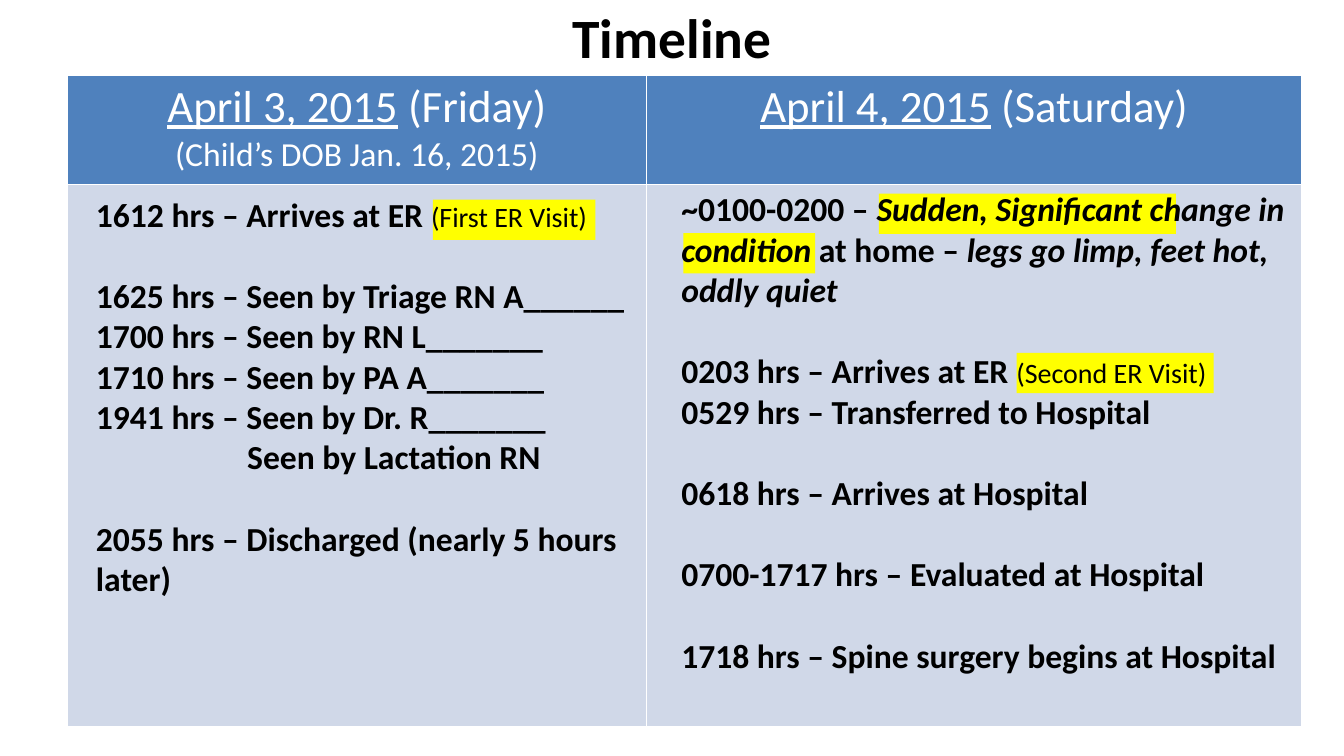
"""Build the two-day timeline slide."""
from lxml.etree import SubElement
from pptx import Presentation
from pptx.dml.color import RGBColor
from pptx.enum.shapes import MSO_SHAPE as Shape
from pptx.enum.text import MSO_ANCHOR as Anchor, PP_ALIGN as Align
from pptx.oxml.ns import qn
from pptx.util import Inches, Pt

BLACK = RGBColor(0x00, 0x00, 0x00)
WHITE = RGBColor(0xFF, 0xFF, 0xFF)
YELLOW = RGBColor(0xFF, 0xFF, 0x00)
HEADER_BLUE = RGBColor(0x4F, 0x81, 0xBD)
BODY_BLUE = RGBColor(0xD0, 0xD8, 0xE8)

BOLD = (36, True, False, False)
ITALIC = (36, True, True, False)
VISIT = (30, False, False, False)
DATE = (48, False, False, True)
DAY = (48, False, False, False)
BIRTH = (36, False, False, False)
TITLE = (59.4, True, False, False)

GAP = Pt(44)
TAB_STOP = Inches(2.25)

HEADERS = [
    [(False, [("April 3, 2015", DATE), (" (Friday)", DAY)]),
     (False, [("(Child’s DOB Jan. 16, 2015)", BIRTH)])],
    [(False, [("April 4, 2015", DATE), (" (Saturday)", DAY)])],
]
FRIDAY = [
    (False, [("1612 hrs – Arrives at ER ", BOLD), ("(First ER Visit)", VISIT)]),
    (True, [("1625 hrs – Seen by Triage RN A______", BOLD)]),
    (False, [("1700 hrs – Seen by RN L_______", BOLD)]),
    (False, [("1710 hrs – Seen by PA A_______", BOLD)]),
    (False, [("1941 hrs – Seen by Dr. R_______", BOLD)]),
    (False, [("\tSeen by Lactation RN", BOLD)]),
    (True, [("2055 hrs – Discharged (nearly 5 hours later)", BOLD)]),
]
SATURDAY = [
    (False, [("~0100-0200 – ", BOLD),
             ("Sudden, Significant change in condition ", ITALIC),
             ("at home – ", BOLD),
             ("legs go limp, feet hot, oddly quiet", ITALIC)]),
    (True, [("0203 hrs – Arrives at ER ", BOLD), ("(Second ER Visit)", VISIT)]),
    (False, [("0529 hrs – Transferred to Hospital", BOLD)]),
    (True, [("0618 hrs – Arrives at Hospital", BOLD)]),
    (True, [("0700-1717 hrs – Evaluated at Hospital", BOLD)]),
    (True, [("1718 hrs – Spine surgery begins at Hospital", BOLD)]),
]
HIGHLIGHTS = [(6.44, 2.97, 2.42), (15.13, 5.25, 2.93),
              (13.08, 2.88, 4.42), (10.17, 3.47, 1.96)]
HIGHLIGHT_HEIGHT = 0.6
TEXT_BOXES = [
    ((1, 0.12, 18, 0.85), [(False, [("Timeline", TITLE)])], Align.CENTER, Anchor.MIDDLE),
    ((1.33, 2.83, 8.38, 6.77), FRIDAY, Align.LEFT, Anchor.TOP),
    ((10.04, 2.75, 9.25, 7.37), SATURDAY, Align.LEFT, Anchor.TOP),
]
COLUMN_WIDTHS = [8.62, 9.75]
ROW_HEIGHTS = [1.63, 8.06]


def add_tab_stop(paragraph):
    properties = paragraph._p.get_or_add_pPr()
    tab_list = SubElement(properties, qn("a:tabLst"))
    SubElement(tab_list, qn("a:tab"), pos=str(TAB_STOP), algn="l")


def write(frame, lines, color, alignment):
    for index, (gap_before, runs) in enumerate(lines):
        paragraph = frame.add_paragraph() if index else frame.paragraphs[0]
        paragraph.alignment = alignment
        if gap_before:
            paragraph.space_before = GAP
        if runs[0][0].startswith("\t"):
            add_tab_stop(paragraph)
        paragraph.font.name = "Calibri"
        paragraph.font.color.rgb = color
        for text, (size, bold, italic, underline) in runs:
            run = paragraph.add_run()
            run.text = text
            run.font.size = Pt(size)
            run.font.bold = bold
            run.font.italic = italic
            run.font.underline = underline


def add_borders(cell):
    properties = cell._tc.get_or_add_tcPr()
    for position, side in enumerate(("lnL", "lnR", "lnT", "lnB")):
        line = properties.makeelement(qn(f"a:{side}"), {"w": str(Pt(1))})
        fill = SubElement(line, qn("a:solidFill"))
        SubElement(fill, qn("a:srgbClr"), val=str(WHITE))
        properties.insert(position, line)


def add_timeline_table(slide):
    table = slide.shapes.add_table(
        2, 2, Inches(1), Inches(1.12),
        Inches(sum(COLUMN_WIDTHS)), Inches(sum(ROW_HEIGHTS))).table
    table.horz_banding = False
    for column, width in zip(table.columns, COLUMN_WIDTHS):
        column.width = Inches(width)
    for row, height, color in zip(table.rows, ROW_HEIGHTS, (HEADER_BLUE, BODY_BLUE)):
        row.height = Inches(height)
        for cell in row.cells:
            cell.fill.solid()
            cell.fill.fore_color.rgb = color
            cell.margin_left = cell.margin_right = Inches(0.15)
            cell.margin_top = cell.margin_bottom = Inches(0.07)
            add_borders(cell)
    for cell, lines in zip(table.rows[0].cells, HEADERS):
        write(cell.text_frame, lines, WHITE, Align.CENTER)


def add_highlight(slide, left, top, width):
    shape = slide.shapes.add_shape(
        Shape.RECTANGLE, Inches(left), Inches(top),
        Inches(width), Inches(HIGHLIGHT_HEIGHT))
    shape.shadow.inherit = False
    shape.fill.solid()
    shape.fill.fore_color.rgb = YELLOW
    shape.line.fill.background()


def add_text(slide, box, lines, alignment, anchor):
    frame = slide.shapes.add_textbox(*map(Inches, box)).text_frame
    frame.word_wrap = True
    frame.vertical_anchor = anchor
    write(frame, lines, BLACK, alignment)


def main():
    presentation = Presentation()
    presentation.slide_width = Inches(20)
    presentation.slide_height = Inches(11.25)
    slide = presentation.slides.add_slide(presentation.slide_layouts[6])
    add_timeline_table(slide)
    for highlight in HIGHLIGHTS:
        add_highlight(slide, *highlight)
    for text_box in TEXT_BOXES:
        add_text(slide, *text_box)
    presentation.save("out.pptx")


if __name__ == "__main__":
    main()
